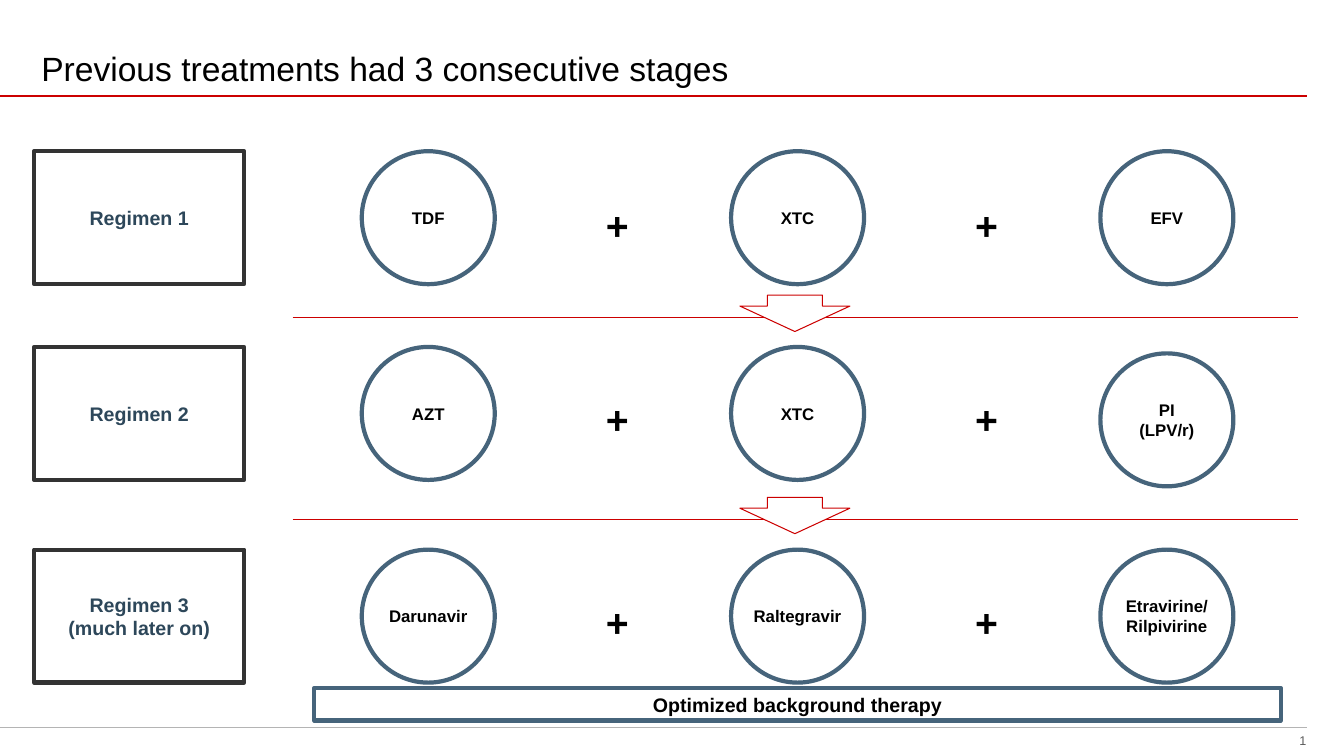
"""Build a slide showing three consecutive treatment regimens."""
import lxml.etree
import pptx
import pptx.dml.color
import pptx.enum.shapes
import pptx.enum.text
import pptx.oxml
import pptx.oxml.ns
import pptx.util

Pt = pptx.util.Pt
SHAPES = pptx.enum.shapes.MSO_SHAPE
ALIGN = pptx.enum.text.PP_ALIGN
ANCHOR = pptx.enum.text.MSO_ANCHOR

COLOURS = {
    "white": "FFFFFF", "black": "000000", "red": "CC0000", "steel": "46647B",
    "navy": "2D475A", "charcoal": "333333", "rule": "B4B4B4", "number": "5C5C5C",
}
REGIMENS = [
    ("Regimen 1", ["TDF", "XTC", "EFV"]),
    ("Regimen 2", ["AZT", "XTC", "PI\v(LPV/r)"]),
    ("Regimen 3\v(much later on)", ["Darunavir", "Raltegravir", "Etravirine/\vRilpivirine"]),
]
ROW_TOPS = [108, 247.8, 392.6]
PLUS_TOPS = [140.2, 278.8, 423.6]
DIVIDER_TOPS = [210.8, 355.2]
FIRST_DRUG_LEFT, FIRST_PLUS_LEFT, COLUMN_STEP = 258.4, 429.2, 263.8
ROW_HEIGHT = 95
LOWERED_DRUG, LOWERED_BY = "PI\v(LPV/r)", 4.6


def colour(name):
    """Return the named colour."""
    return pptx.dml.color.RGBColor.from_string(COLOURS[name])


def write(shape, text, size, colour_name, bold=True, align=ALIGN.CENTER,
          anchor=ANCHOR.MIDDLE, margins=(3.6, 3.6, 3.6, 3.6), before=0, wrap=True):
    """Put formatted text in a shape."""
    frame = shape.text_frame
    frame.text = text
    frame.word_wrap = wrap
    frame.auto_size = pptx.enum.text.MSO_AUTO_SIZE.NONE
    frame.vertical_anchor = anchor
    frame.margin_left, frame.margin_top, frame.margin_right, frame.margin_bottom = map(Pt, margins)
    for paragraph in frame.paragraphs:
        paragraph.alignment = align
        paragraph.space_before = Pt(before)
        for run in paragraph.runs:
            run.font.name = "Arial"
            run.font.size = Pt(size)
            run.font.bold = bold
            run.font.color.rgb = colour(colour_name)


def add_outlined(slide, kind, left, top, width, height, line, weight=3, filled=True):
    """Add an outlined preset shape."""
    shape = slide.shapes.add_shape(kind, Pt(left), Pt(top), Pt(width), Pt(height))
    shape.shadow.inherit = False
    if filled:
        shape.fill.solid()
        shape.fill.fore_color.rgb = colour("white")
    else:
        shape.fill.background()
    shape.line.color.rgb = colour(line)
    shape.line.width = Pt(weight)
    return shape


def add_rule(slide, left, right, top, line, weight=0.75):
    """Add a horizontal line."""
    connector = slide.shapes.add_connector(
        pptx.enum.shapes.MSO_CONNECTOR.STRAIGHT, Pt(left), Pt(top), Pt(right), Pt(top))
    connector.line.color.rgb = colour(line)
    connector.line.width = Pt(weight)
    properties = connector._element.spPr
    properties.append(pptx.oxml.parse_xml("<a:effectLst %s/>" % pptx.oxml.ns.nsdecls("a")))


def add_title(slide, text):
    """Place and format the title."""
    title = slide.shapes.title
    title.left, title.top, title.width, title.height = Pt(26.6), Pt(0), Pt(907), Pt(69)
    write(title, text, 24, "black", bold=False, align=ALIGN.LEFT,
          anchor=ANCHOR.BOTTOM, margins=(2.9, 2.9, 2.9, 5.8))


def add_slide_number(slide, text):
    """Add the slide number as a field."""
    box = slide.shapes.add_textbox(Pt(922.3), Pt(523.4), Pt(10.8), Pt(10.8))
    write(box, text, 9, "number", bold=False, align=ALIGN.RIGHT,
          margins=(0, 0, 0, 0), wrap=False)
    run = box.text_frame.paragraphs[0].runs[0]._r
    run.tag = pptx.oxml.ns.qn("a:fld")
    run.set("id", "{B6F15528-21DE-4FAA-801E-634DDDAF4B2B}")
    run.set("type", "slidenum")


def add_plus(slide, left, top):
    """Add a plus sign between two drugs."""
    box = slide.shapes.add_textbox(Pt(left), Pt(top), Pt(22.4), Pt(39.6))
    write(box, "+", 28, "black", align=ALIGN.LEFT, anchor=ANCHOR.TOP, before=12, wrap=False)


def add_regimen(slide, label, drugs, top, plus_top):
    """Add a regimen label with its row of drugs."""
    box = add_outlined(slide, SHAPES.RECTANGLE, 24.5, top, 150, ROW_HEIGHT, "charcoal")
    write(box, label, 14, "navy", before=3)
    for column, drug in enumerate(drugs):
        left = FIRST_DRUG_LEFT + column * COLUMN_STEP
        drug_top = top + LOWERED_BY if drug == LOWERED_DRUG else top
        circle = add_outlined(slide, SHAPES.OVAL, left, drug_top, ROW_HEIGHT, ROW_HEIGHT, "steel")
        write(circle, drug, 12, "black", margins=(0, 0, 0, 0), before=12)
    for gap in range(len(drugs) - 1):
        add_plus(slide, FIRST_PLUS_LEFT + gap * COLUMN_STEP, plus_top)


def add_divider(slide, top):
    """Add a down arrow with a line on either side."""
    arrow = add_outlined(slide, SHAPES.DOWN_ARROW, 528.5, top, 78.6, 26, "red", 0.75, filled=False)
    arrow.adjustments[0], arrow.adjustments[1] = 0.5, 0.7
    for left, right in [(209, 546.5), (589.5, 927)]:
        add_rule(slide, left, right, top + 16, "red")


def main():
    """Build and save the presentation."""
    presentation = pptx.Presentation()
    presentation.slide_width, presentation.slide_height = Pt(960), Pt(540)
    slide = presentation.slides.add_slide(presentation.slide_layouts[5])
    add_slide_number(slide, "20")
    add_rule(slide, 0, 933.6, 519.6, "rule")
    add_rule(slide, 0, 933.6, 68.6, "red", 1.5)
    add_title(slide, "Previous treatments had 3 consecutive stages")
    for (label, drugs), top, plus_top in zip(REGIMENS, ROW_TOPS, PLUS_TOPS):
        add_regimen(slide, label, drugs, top, plus_top)
    for top in DIVIDER_TOPS:
        add_divider(slide, top)
    therapy = add_outlined(slide, SHAPES.RECTANGLE, 224.4, 491.6, 690.6, 23, "steel")
    write(therapy, "Optimized background therapy", 14, "black", before=3)
    presentation.save("out.pptx")


if __name__ == "__main__":
    main()
